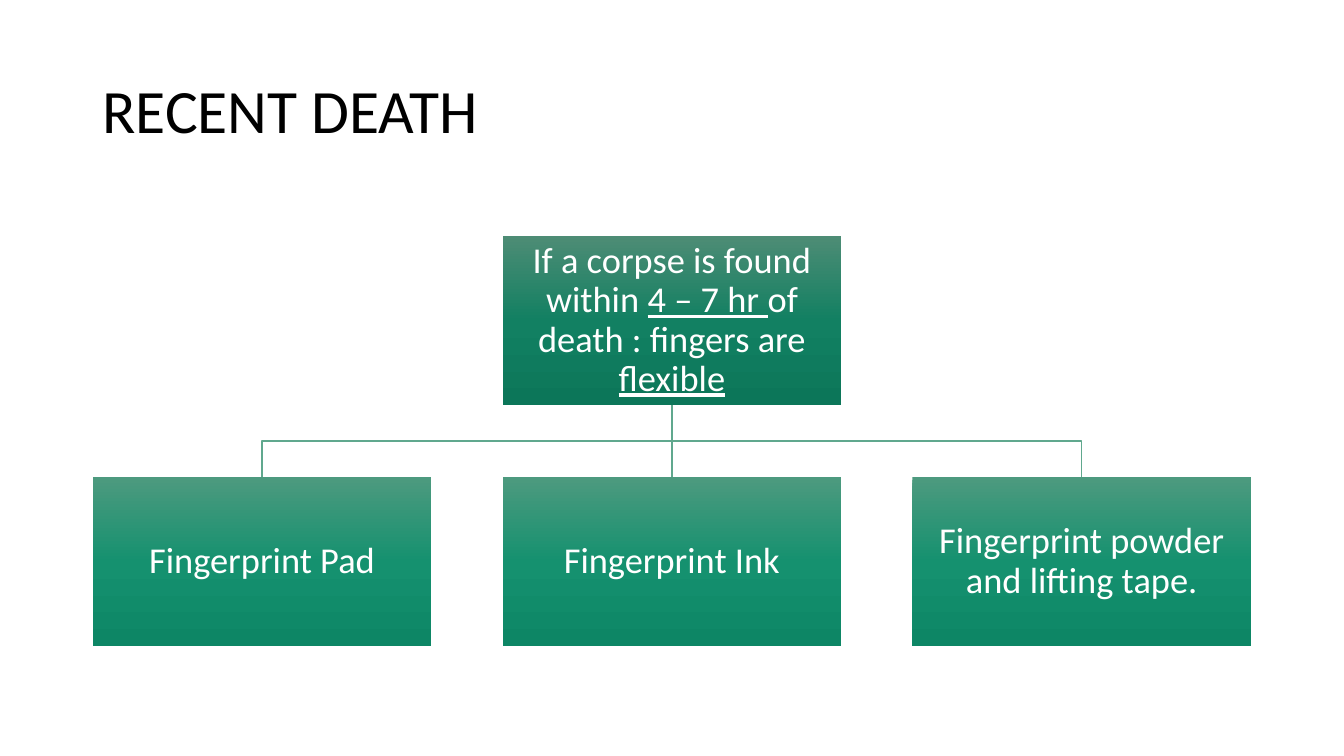
from copy import deepcopy

from lxml.etree import SubElement
from pptx import Presentation
from pptx.dml.color import RGBColor
from pptx.enum.shapes import MSO_CONNECTOR, MSO_SHAPE
from pptx.enum.text import MSO_ANCHOR, PP_ALIGN
from pptx.oxml.ns import qn
from pptx.util import Pt

BLACK = RGBColor(0x00, 0x00, 0x00)
WHITE = RGBColor(0xFF, 0xFF, 0xFF)
LINE_GREEN = RGBColor(0x60, 0xA8, 0x8E)
PARENT_GREENS = [RGBColor(0x4D, 0x8C, 0x75), RGBColor(0x12, 0x80, 0x62), RGBColor(0x0C, 0x76, 0x59)]
CHILD_GREENS = [RGBColor(0x4D, 0x9A, 0x7F), RGBColor(0x15, 0x91, 0x6F), RGBColor(0x0D, 0x86, 0x65)]
FONT = "Calibri"

# Chart geometry, in points
CENTER = 480
BOX_WIDTH, BOX_HEIGHT = 242, 121
PITCH = 292.75
PARENT_TOP, CHILD_TOP = 168.6, 340.7
PARENT_BOTTOM = PARENT_TOP + BOX_HEIGHT

# Runs are (text, underlined)
PARENT_RUNS = [
    ("If a corpse is found within ", False),
    ("4 – 7 hr ", True),
    ("of death : fingers are ", False),
    ("flexible", True),
]
CHILDREN = ["Fingerprint Pad", "Fingerprint Ink", "Fingerprint powder and lifting tape."]


def write_runs(paragraph, runs, size, color):
    paragraph.line_spacing = 0.9
    for text, underlined in runs:
        run = paragraph.add_run()
        run.text = text
        run.font.name = FONT
        run.font.size = Pt(size)
        run.font.color.rgb = color
        if underlined:
            run.font.underline = True


def add_title(slide, text):
    box = slide.shapes.add_textbox(Pt(66), Pt(28.75), Pt(828), Pt(104.4))
    frame = box.text_frame
    frame.word_wrap = True
    frame.vertical_anchor = MSO_ANCHOR.MIDDLE
    write_runs(frame.paragraphs[0], [(text, False)], 44, BLACK)


def fill_gradient(shape, colors):
    """Fill from top to bottom with three evenly spaced colours."""
    shape.fill.gradient()
    shape.fill.gradient_angle = 270
    first_stop = shape.element.spPr.find(qn("a:gradFill")).find(qn("a:gsLst"))[0]
    first_stop.addnext(deepcopy(first_stop))
    for index, (stop, color) in enumerate(zip(shape.fill.gradient_stops, colors)):
        stop.position = index / 2
        stop.color.rgb = color


def add_box(slide, center, top, runs, colors):
    shape = slide.shapes.add_shape(
        MSO_SHAPE.RECTANGLE, Pt(center - BOX_WIDTH / 2), Pt(top), Pt(BOX_WIDTH), Pt(BOX_HEIGHT))
    shape.shadow.inherit = False
    fill_gradient(shape, colors)
    shape.line.fill.background()
    frame = shape.text_frame
    frame.word_wrap = True
    frame.vertical_anchor = MSO_ANCHOR.MIDDLE
    frame.margin_left = frame.margin_right = Pt(1.3)
    frame.margin_top = frame.margin_bottom = Pt(1.3)
    paragraph = frame.paragraphs[0]
    paragraph.alignment = PP_ALIGN.CENTER
    write_runs(paragraph, runs, 26, WHITE)


def style_line(line):
    line.color.rgb = LINE_GREEN
    line.width = Pt(1)


def add_straight_branch(slide):
    connector = slide.shapes.add_connector(
        MSO_CONNECTOR.STRAIGHT, Pt(CENTER), Pt(PARENT_BOTTOM), Pt(CENTER), Pt(CHILD_TOP))
    SubElement(connector.element.spPr, qn("a:effectLst"))
    style_line(connector.line)


def add_bent_branch(slide, center):
    middle = (PARENT_BOTTOM + CHILD_TOP) / 2
    builder = slide.shapes.build_freeform(Pt(CENTER), Pt(PARENT_BOTTOM))
    corners = [(CENTER, middle), (center, middle), (center, CHILD_TOP)]
    builder.add_line_segments([(Pt(x), Pt(y)) for x, y in corners], close=False)
    shape = builder.convert_to_shape()
    shape.shadow.inherit = False
    shape.fill.background()
    style_line(shape.line)


def main():
    presentation = Presentation()
    presentation.slide_width, presentation.slide_height = Pt(960), Pt(540)
    slide = presentation.slides.add_slide(presentation.slide_layouts[6])

    add_title(slide, "RECENT DEATH")

    # Branches behind the boxes
    add_bent_branch(slide, CENTER + PITCH)
    add_straight_branch(slide)
    add_bent_branch(slide, CENTER - PITCH)

    # Parent box and its row of children
    add_box(slide, CENTER, PARENT_TOP, PARENT_RUNS, PARENT_GREENS)
    for index, text in enumerate(CHILDREN):
        add_box(slide, CENTER + (index - 1) * PITCH, CHILD_TOP, [(text, False)], CHILD_GREENS)

    presentation.save("out.pptx")


if __name__ == "__main__":
    main()
